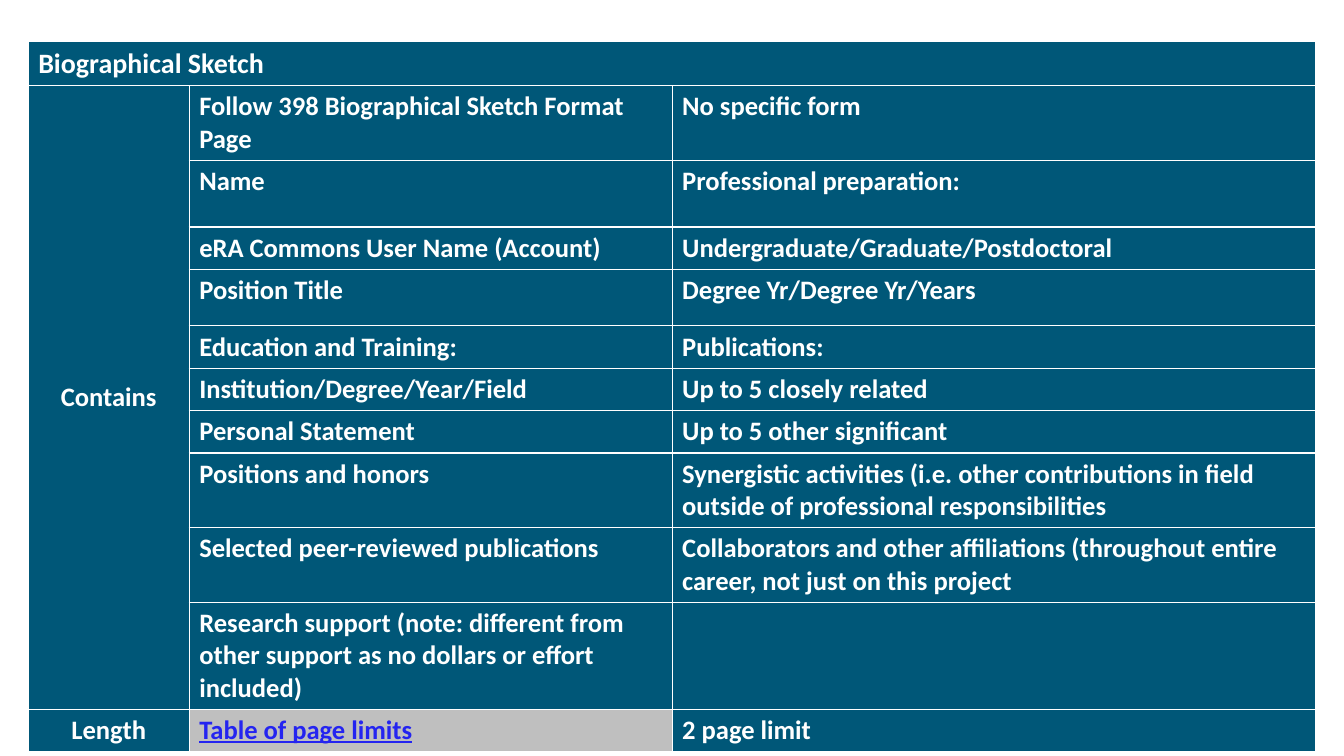
from dataclasses import dataclass

from lxml import etree
from pptx import Presentation
from pptx.dml.color import RGBColor
from pptx.enum import text
from pptx.oxml import ns
from pptx.util import Cm, Pt


@dataclass(frozen=True)
class Theme:
    font: str = "Calibri"
    teal: str = "005778"
    gray: str = "BFBFBF"
    white: str = "FFFFFF"
    link: str = "2424F0"
    heading: int = 20
    body: int = 19
    border: int = 1


theme = Theme()


def draw_borders(cell):
    properties = cell._tc.get_or_add_tcPr()
    for index, side in enumerate(("lnL", "lnR", "lnT", "lnB")):
        line = etree.Element(ns.qn(f"a:{side}"), w=str(Pt(theme.border)))
        fill = etree.SubElement(line, ns.qn("a:solidFill"))
        etree.SubElement(fill, ns.qn("a:srgbClr"), val=theme.white)
        properties.insert(index, line)


def write_cell(cell, words, size=theme.body, color=theme.white):
    para = cell.text_frame.paragraphs[0]
    span = para.add_run()
    span.text = words
    span.font.name = theme.font
    span.font.size = Pt(size)
    span.font.bold = True
    span.font.color.rgb = RGBColor.from_string(color)
    return para, span


contents = [
    ("Follow 398 Biographical Sketch Format Page", "No specific form"),
    ("Name", "Professional preparation:"),
    ("eRA Commons User Name (Account)", "Undergraduate/Graduate/Postdoctoral"),
    ("Position Title", "Degree Yr/Degree Yr/Years"),
    ("Education and Training:", "Publications:"),
    ("Institution/Degree/Year/Field", "Up to 5 closely related"),
    ("Personal Statement", "Up to 5 other significant"),
    ("Positions and honors",
     "Synergistic activities (i.e. other contributions in field "
     "outside of professional responsibilities"),
    ("Selected peer-reviewed publications",
     "Collaborators and other affiliations (throughout entire career, "
     "not just on this project"),
    ("Research support (note: different from other support as no dollars "
     "or effort included)", ""),
]
column_widths = [4.06, 12.17, 16.21]
row_heights = [1.04, 1.19, 1.68, 1.07, 1.42, 1.04,
               1.02, 1.02, 1.78, 1.78, 1.78, 1.04]

deck = Presentation()
deck.slide_width, deck.slide_height = Cm(33.87), Cm(19.05)
page = deck.slides.add_slide(deck.slide_layouts[6])

table = page.shapes.add_table(
    len(row_heights), len(column_widths), Cm(0.71), Cm(1.04),
    Cm(sum(column_widths)), Cm(sum(row_heights))).table
for column, width in zip(table.columns, column_widths):
    column.width = Cm(width)
for row, height in zip(table.rows, row_heights):
    row.height = Cm(height)

for cell in table.iter_cells():
    cell.fill.solid()
    cell.fill.fore_color.rgb = RGBColor.from_string(theme.teal)
    draw_borders(cell)

last = len(row_heights) - 1
table.cell(0, 0).merge(table.cell(0, 2))
table.cell(1, 0).merge(table.cell(last - 1, 0))

write_cell(table.cell(0, 0), "Biographical Sketch", theme.heading)

for row_index, label in ((1, "Contains"), (last, "Length")):
    label_cell = table.cell(row_index, 0)
    label_cell.vertical_anchor = text.MSO_ANCHOR.MIDDLE
    para, span = write_cell(label_cell, label)
    para.alignment = text.PP_ALIGN.CENTER

for row_index, entries in enumerate(contents, start=1):
    for column_index, words in enumerate(entries, start=1):
        if words:
            write_cell(table.cell(row_index, column_index), words)

limits_cell = table.cell(last, 1)
limits_cell.fill.fore_color.rgb = RGBColor.from_string(theme.gray)
para, span = write_cell(limits_cell, "Table of page limits", color=theme.link)
span.font.underline = True
write_cell(table.cell(last, 2), "2 page limit")

deck.save("out.pptx")
